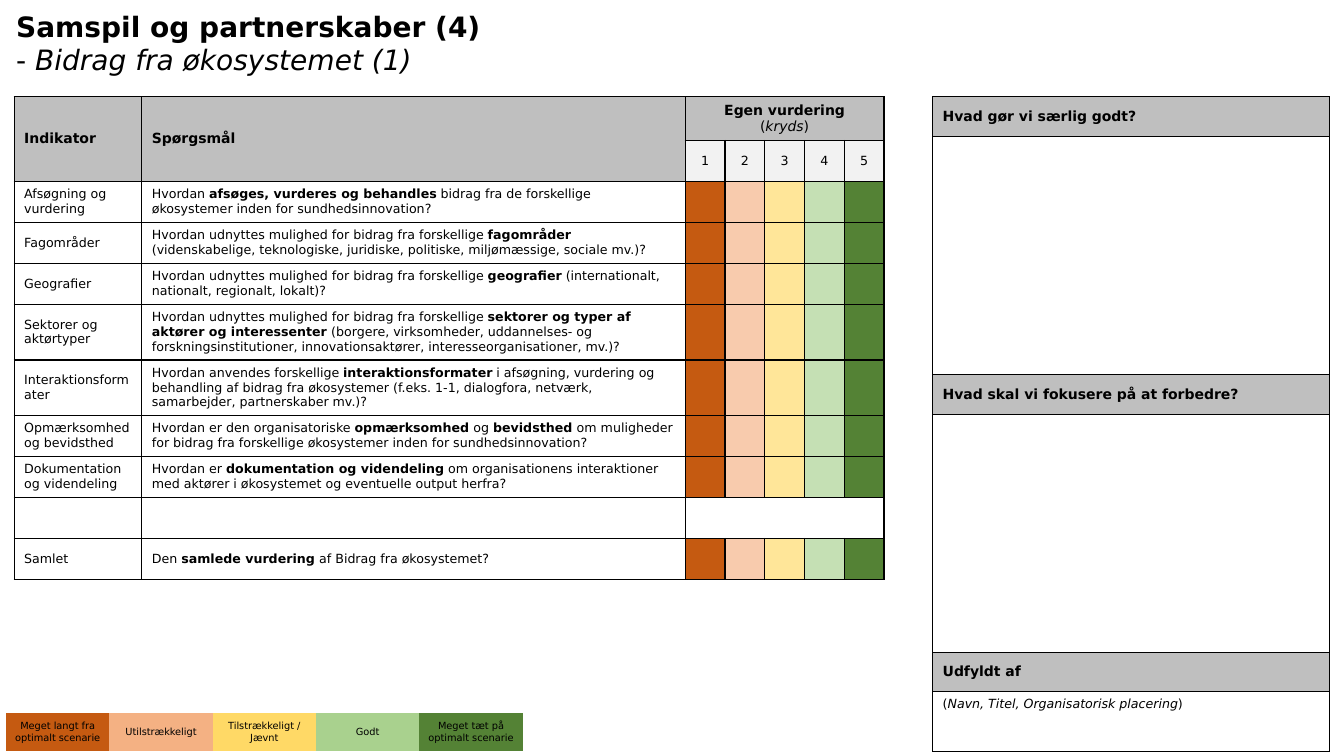
from pptx import Presentation
from pptx.dml.color import RGBColor
from pptx.enum.text import MSO_ANCHOR, MSO_AUTO_SIZE, PP_ALIGN
from pptx.oxml.ns import qn
from pptx.util import Inches, Pt
from lxml.etree import SubElement

BLACK = RGBColor(0x00, 0x00, 0x00)
WHITE = RGBColor(0xFF, 0xFF, 0xFF)
HEADER_GREY = RGBColor(0xBF, 0xBF, 0xBF)
SCORE_GREY = RGBColor(0xF2, 0xF2, 0xF2)
RUST = RGBColor(0xC5, 0x5A, 0x11)
PEACH = RGBColor(0xF8, 0xCB, 0xAD)
CREAM = RGBColor(0xFF, 0xE6, 0x99)
MINT = RGBColor(0xC5, 0xE0, 0xB4)
FOREST = RGBColor(0x54, 0x82, 0x35)
ORANGE = RGBColor(0xF4, 0xB1, 0x83)
YELLOW = RGBColor(0xFF, 0xD9, 0x66)
LIGHT_GREEN = RGBColor(0xA9, 0xD1, 0x8E)

SCORE_COLORS = [RUST, PEACH, CREAM, MINT, FOREST]
ALL_SIDES = "LRTB"

QUESTIONS = [
    ("Afsøgning og vurdering",
     "Hvordan *afsøges, vurderes og behandles* bidrag fra de forskellige "
     "økosystemer inden for sundhedsinnovation?"),
    ("Fagområder",
     "Hvordan udnyttes mulighed for bidrag fra forskellige *fagområder *"
     "(videnskabelige, teknologiske, juridiske, politiske, miljømæssige, sociale mv.)?"),
    ("Geografier",
     "Hvordan udnyttes mulighed for bidrag fra forskellige *geografier* "
     "(internationalt, nationalt, regionalt, lokalt)?"),
    ("Sektorer og aktørtyper",
     "Hvordan udnyttes mulighed for bidrag fra forskellige "
     "*sektorer og typer af aktører og interessenter *(borgere, virksomheder, "
     "uddannelses- og forskningsinstitutioner, innovationsaktører, "
     "interesseorganisationer, mv.)?"),
    ("Interaktionsformater",
     "Hvordan anvendes forskellige *interaktionsformater* i afsøgning, vurdering og "
     "behandling af bidrag fra økosystemer (f.eks. 1-1, dialogfora, netværk, "
     "samarbejder, partnerskaber mv.)?"),
    ("Opmærksomhed og bevidsthed",
     "Hvordan er den organisatoriske *opmærksomhed *og *bevidsthed *om muligheder "
     "for bidrag fra forskellige økosystemer inden for sundhedsinnovation?"),
    ("Dokumentation og videndeling",
     "Hvordan er *dokumentation og videndeling* om organisationens interaktioner "
     "med aktører i økosystemet og eventuelle output herfra?"),
    ("", ""),
    ("Samlet", "Den *samlede vurdering *af Bidrag fra økosystemet?"),
]

LEGEND = [
    ("Meget langt fra optimalt scenarie", RUST),
    ("Utilstrækkeligt", ORANGE),
    ("Tilstrækkeligt / Jævnt", YELLOW),
    ("Godt", LIGHT_GREEN),
    ("Meget tæt på optimalt scenarie", FOREST),
]


class SlideBuilder:
    font_name = "DejaVu Sans"
    title_size = 20
    header_size = 10
    body_size = 9
    legend_size = 7

    def __init__(self, presentation):
        self.slide = presentation.slides.add_slide(presentation.slide_layouts[5])
        self.column = presentation.slide_width / 100
        self.row = presentation.slide_height / 100

    def across(self, columns):
        return round(columns * self.column)

    def down(self, rows):
        return round(rows * self.row)

    def put_text(self, frame, text, size, align=PP_ALIGN.LEFT):
        for number, line in enumerate(text.split("\n")):
            paragraph = frame.add_paragraph() if number else frame.paragraphs[0]
            paragraph.alignment = align
            paragraph.font.name = self.font_name
            paragraph.font.size = Pt(size)
            paragraph.font.color.rgb = BLACK
            paragraph.font.bold = False
            for bold, strong_part in enumerate(line.split("*")):
                for italic, words in enumerate(strong_part.split("_")):
                    if words:
                        run = paragraph.add_run()
                        run.text = words
                        run.font.bold = bold % 2 == 1
                        run.font.italic = italic % 2 == 1

    def title(self, text, left, top, width, height):
        heading = self.slide.shapes.title
        heading.left, heading.top = self.across(left), self.down(top)
        heading.width, heading.height = self.across(width), self.down(height)
        frame = heading.text_frame
        frame.word_wrap = True
        frame.auto_size = MSO_AUTO_SIZE.SHAPE_TO_FIT_TEXT
        frame.vertical_anchor = MSO_ANCHOR.TOP
        self.put_text(frame, text, self.title_size)

    def table(self, left, top, widths, heights):
        grid = self.slide.shapes.add_table(
            len(heights), len(widths), self.across(left), self.down(top),
            self.across(sum(widths)), self.down(sum(heights))).table
        grid.first_row = grid.horz_banding = False
        for column, width in zip(grid.columns, widths):
            column.width = self.across(width)
        for row, height in zip(grid.rows, heights):
            row.height = self.down(height)
        return grid

    def cell(self, cell, text="", size=body_size, fill=WHITE, align=PP_ALIGN.LEFT,
             sides=ALL_SIDES, anchor=MSO_ANCHOR.MIDDLE):
        cell.vertical_anchor = anchor
        self.borders(cell, sides)
        cell.fill.solid()
        cell.fill.fore_color.rgb = fill
        self.put_text(cell.text_frame, text, size, align)

    def borders(self, cell, sides):
        properties = cell._tc.get_or_add_tcPr()
        for side in ALL_SIDES:
            line = SubElement(properties, qn(f"a:ln{side}"), w=str(Pt(1)))
            if side in sides:
                paint = SubElement(line, qn("a:solidFill"))
                SubElement(paint, qn("a:srgbClr"), val=str(BLACK))
            else:
                SubElement(line, qn("a:noFill"))

    def header(self, cell, text, align=PP_ALIGN.LEFT):
        self.cell(cell, text, self.header_size, HEADER_GREY, align)

    def assessment(self, left, top):
        grid = self.table(left, top, [9.5, 40.43] + [2.96] * 5, [5.2] + [5.42] * 10)
        headings = {(0, 0): ("*Indikator*", PP_ALIGN.LEFT),
                    (0, 1): ("*Spørgsmål*", PP_ALIGN.LEFT),
                    (0, 2): ("*Egen vurdering*\n(_kryds_)", PP_ALIGN.CENTER)}
        for row in range(2):
            for column in range(7):
                if row == 0 or column < 2:
                    text, align = headings.get((row, column), ("", PP_ALIGN.LEFT))
                    self.header(grid.cell(row, column), text, align)
                else:
                    self.cell(grid.cell(row, column), str(column - 1),
                              fill=SCORE_GREY, align=PP_ALIGN.CENTER)
        grid.cell(0, 0).merge(grid.cell(1, 0))
        grid.cell(0, 1).merge(grid.cell(1, 1))
        grid.cell(0, 2).merge(grid.cell(0, 6))
        for row, (indicator, question) in enumerate(QUESTIONS, 2):
            self.cell(grid.cell(row, 0), indicator)
            self.cell(grid.cell(row, 1), question)
            for score, color in enumerate(SCORE_COLORS):
                if indicator:
                    fill, sides = color, ALL_SIDES
                else:
                    fill = WHITE
                    sides = "TB" + "L" * (score == 0) + "R" * (score == 4)
                self.cell(grid.cell(row, score + 2), fill=fill, sides=sides)

    def reflection(self, left, top):
        sections = [("Hvad gør vi særlig godt?", "", 31.47),
                    ("Hvad skal vi fokusere på at forbedre?", "", 31.47),
                    ("Udfyldt af", "(_Navn, Titel, Organisatorisk placering_)", 7.87)]
        heights = [height for section in sections for height in (5.26, section[2])]
        grid = self.table(left, top, [29.56], heights)
        for number, (heading, answer, _) in enumerate(sections):
            self.header(grid.cell(2 * number, 0), f"*{heading}*")
            self.cell(grid.cell(2 * number + 1, 0), answer, anchor=MSO_ANCHOR.TOP)

    def legend(self, left, top):
        grid = self.table(left, top, [7.69] * len(LEGEND), [5.13])
        for column, (label, color) in enumerate(LEGEND):
            step = grid.cell(0, column)
            step.margin_left = step.margin_right = Inches(0.07)
            step.margin_top = step.margin_bottom = 0
            self.cell(step, label, self.legend_size, color, PP_ALIGN.CENTER, sides="")


def main():
    presentation = Presentation()
    presentation.slide_width = Inches(13.33)
    presentation.slide_height = Inches(7.5)
    builder = SlideBuilder(presentation)
    builder.title("*Samspil og partnerskaber (4)*\n- _Bidrag fra økosystemet (1)_",
                  0.45, 0.53, 74.42, 10.27)
    builder.assessment(1.05, 12.8)
    builder.reflection(69.39, 12.8)
    builder.legend(0.45, 94.27)
    presentation.save("out.pptx")


if __name__ == "__main__":
    main()
